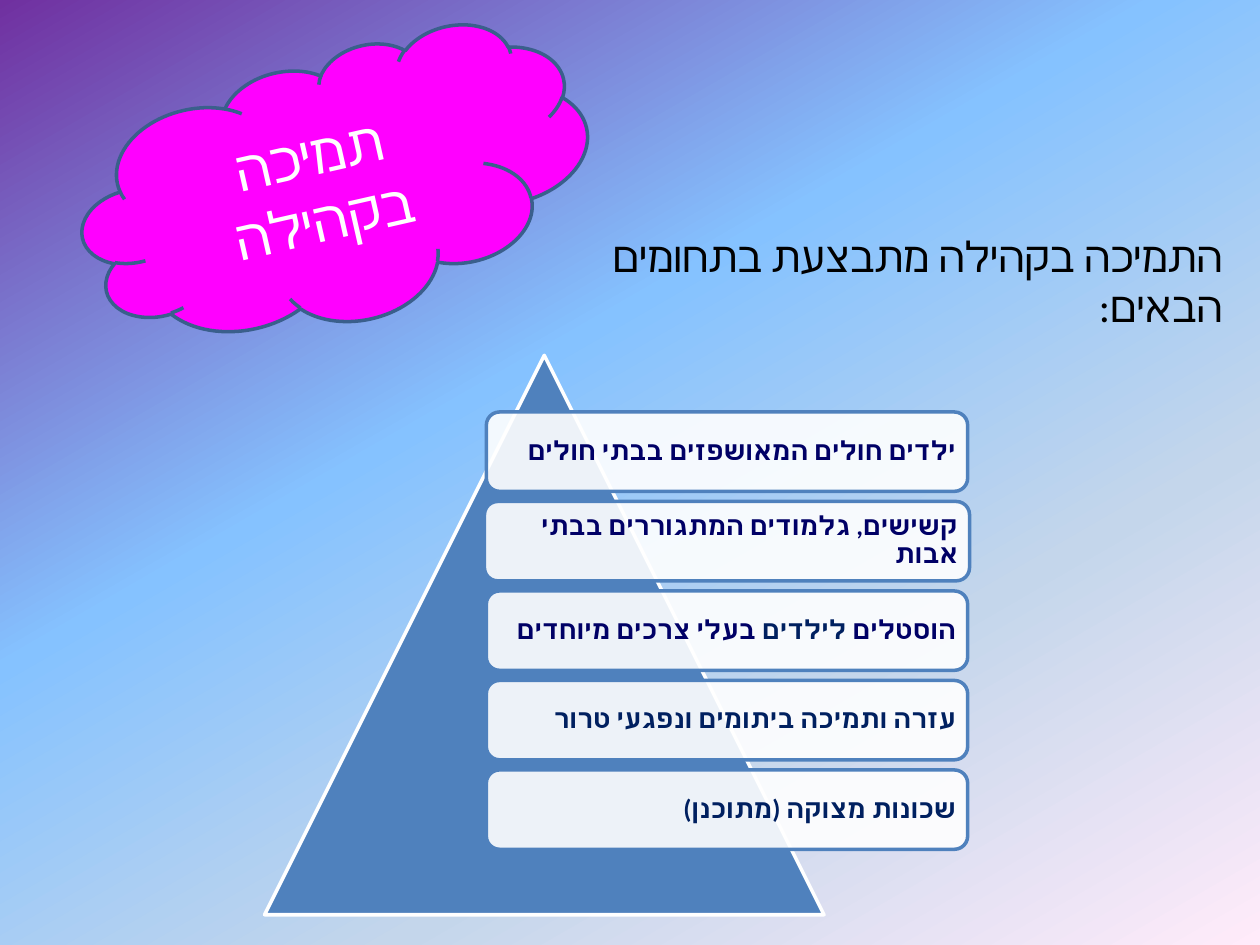
import pptx
import pptx.dml.color
import pptx.enum.shapes
import pptx.enum.text
import pptx.oxml
import pptx.oxml.ns
import pptx.util
from lxml import etree

THEME = {
    "font": "Calibri",
    "sky": [(0, "7030A0"), (40, "85C2FF"), (70, "C4D6EB"), (100, "FFEBFA")],
    "sky_angle": 60,
    "white": "FFFFFF",
    "black": "000000",
    "blue": "4F81BD",
    "cloud": "FF00FF",
    "cloud_edge": "3A5F8C",
    "navy": "000066",
    "dark": "002060",
    "title_size": 32,
    "intro_size": 24,
    "card_size": 15,
    "line": 2,
    "card_opacity": 90,
}

deck = pptx.Presentation()
deck.slide_width = pptx.util.Inches(10)
deck.slide_height = pptx.util.Inches(7.5)
slide = deck.slides.add_slide(deck.slide_layouts[6])
SHAPE = pptx.enum.shapes.MSO_SHAPE
ALIGN = pptx.enum.text.PP_ALIGN
rgb = pptx.dml.color.RGBColor.from_string
qn = pptx.oxml.ns.qn


def add_box(kind, left, top, width, height, fill=None, edge=None):
    place = [int(deck.slide_width * left / 100), int(deck.slide_height * top / 100),
             int(deck.slide_width * width / 100), int(deck.slide_height * height / 100)]
    if kind is None:
        return slide.shapes.add_textbox(*place)
    box = slide.shapes.add_shape(kind, *place)
    box.shadow.inherit = False
    box.fill.solid()
    box.fill.fore_color.rgb = rgb(fill)
    box.line.color.rgb = rgb(edge)
    box.line.width = pptx.util.Pt(THEME["line"])
    return box


def write(box, pieces, size, align):
    box.text_frame.word_wrap = True
    paragraph = box.text_frame.paragraphs[0]
    paragraph.alignment = align
    paragraph._p.get_or_add_pPr().set("rtl", "1")
    for words, color in pieces:
        run = paragraph.add_run()
        run.text = words
        run.font.name = THEME["font"]
        run.font.size = pptx.util.Pt(size)
        run.font.color.rgb = rgb(color)
        etree.SubElement(run._r.get_or_add_rPr(), qn("a:cs"), typeface=THEME["font"])
    return paragraph


sky = slide.background.fill
sky.gradient()
gradient = slide.background._cSld.find(".//" + qn("a:gradFill"))
gradient.find(qn("a:lin")).set("ang", str(THEME["sky_angle"] * 60000))
stops = gradient.find(qn("a:gsLst"))
for stop in list(stops):
    stops.remove(stop)
for position, color in THEME["sky"]:
    stop = etree.SubElement(stops, qn("a:gs"), pos=str(position * 1000))
    etree.SubElement(stop, qn("a:srgbClr"), val=color)

intro = add_box(None, 42.9, 23.73, 55.1, 12.13)
write(intro, [("התמיכה בקהילה מתבצעת בתחומים הבאים:", THEME["black"])],
      THEME["intro_size"], ALIGN.RIGHT)
intro.text_frame.auto_size = pptx.enum.text.MSO_AUTO_SIZE.SHAPE_TO_FIT_TEXT

add_box(SHAPE.ISOSCELES_TRIANGLE, 21, 37.6, 44.4, 59.2, THEME["blue"], THEME["white"])

support_areas = [
    (38.2, [("ילדים חולים המאושפזים בבתי חולים", THEME["navy"])]),
    (38.5, [("קשישים, גלמודים המתגוררים בבתי אבות", THEME["navy"])]),
    (38.2, [("הוסטלים ", THEME["navy"]), ("לילדים", THEME["dark"]),
            (" בעלי צרכים מיוחדים", THEME["navy"])]),
    (38.2, [("עזרה ותמיכה ביתומים ונפגעי טרור", THEME["dark"])]),
    (38.2, [("שכונות מצוקה (מתוכנן)", THEME["dark"])]),
]
card_center, first_top, card_height, card_pitch = 57.7, 43.6, 8.4, 9.47
for row, (width, pieces) in enumerate(support_areas):
    card = add_box(SHAPE.ROUNDED_RECTANGLE, card_center - width / 2,
                   first_top + row * card_pitch, width, card_height,
                   THEME["white"], THEME["blue"])
    tint = card._element.spPr.find(qn("a:solidFill")).find(qn("a:srgbClr"))
    etree.SubElement(tint, qn("a:alpha"), val=str(THEME["card_opacity"] * 1000))
    frame = card.text_frame
    frame.margin_left = frame.margin_right = pptx.util.Inches(0.06)
    frame.margin_top = frame.margin_bottom = pptx.util.Inches(0.06)
    frame.vertical_anchor = pptx.enum.text.MSO_ANCHOR.MIDDLE
    paragraph = write(card, pieces, THEME["card_size"], ALIGN.RIGHT)
    paragraph.line_spacing = 0.9
    for run in paragraph.runs:
        run.font.bold = True

cloud = add_box(SHAPE.CLOUD, 6.2, 5.73, 40.9, 28.4, THEME["cloud"], THEME["cloud_edge"])
cloud.rotation = 347.2
cloud.text_frame.vertical_anchor = pptx.enum.text.MSO_ANCHOR.MIDDLE
write(cloud, [("תמיכה בקהילה", THEME["white"])], THEME["title_size"], ALIGN.CENTER)

deck.save("out.pptx")
